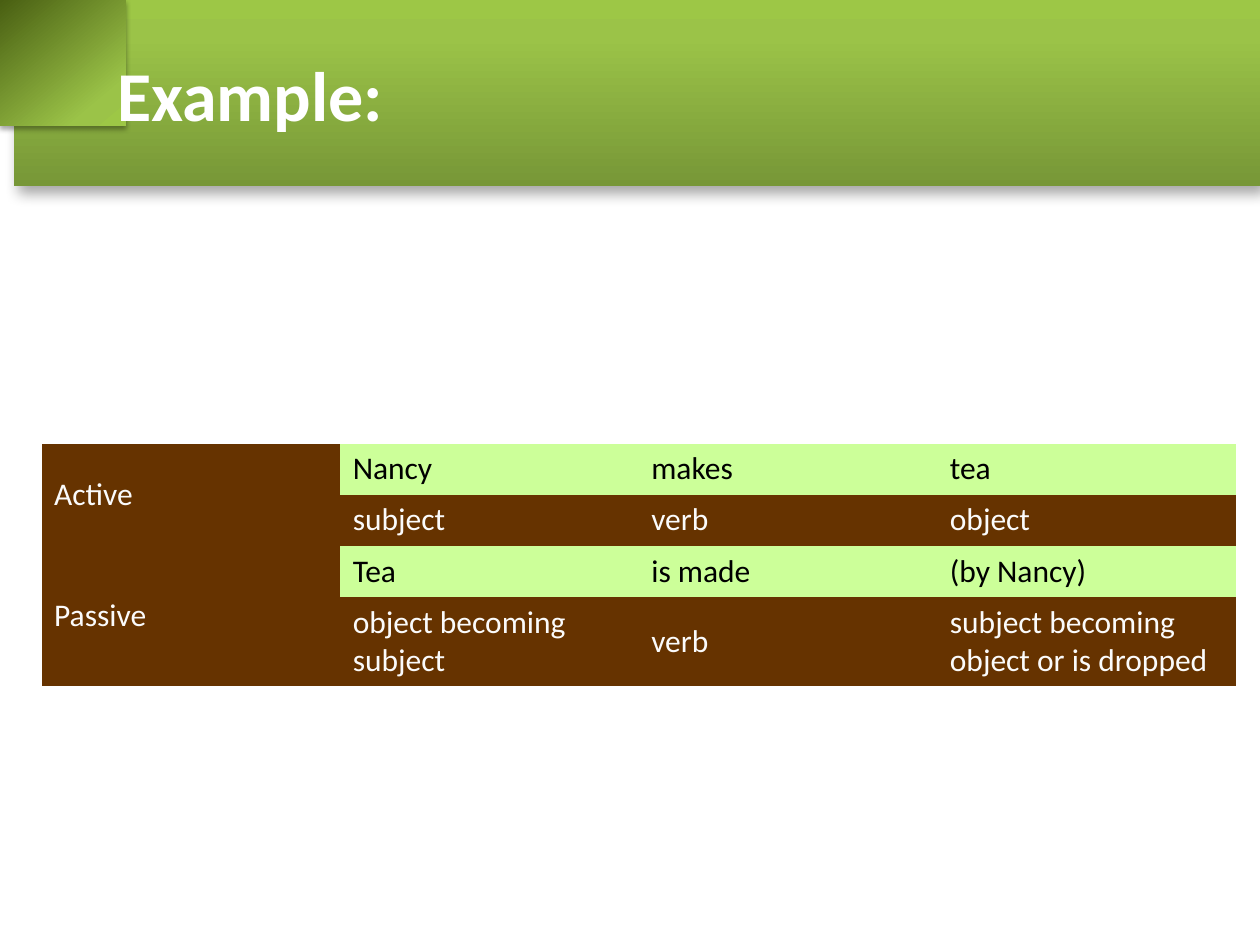
from dataclasses import dataclass

import lxml.etree
import pptx
import pptx.dml.color
import pptx.enum.text
import pptx.oxml.ns
import pptx.util

WIDTH, HEIGHT = 10, 7.5
BROWN, LIME, PALE, BLACK, WHITE = "663300", "CCFF99", "FBFBFB", "000000", "FFFFFF"
NO_GRID_STYLE = "{2D5ABB26-0587-4C30-8999-92F81FD0307C}"
COLUMN_WIDTH = 2.37
ROW_HEIGHTS = (0.4, 0.4, 0.4, 0.7)
HEXAGON = ((0, 0.09), (0.11, 0), (0.73, 0.31), (0.73, 1.16), (0.11, 1.47), (0, 1.41))


@dataclass
class Shadow:
    blur: float
    distance: float
    direction: int


@dataclass
class Voice:
    name: str
    words: tuple[str, ...]
    roles: tuple[str, ...]


VOICES = (
    Voice("Active", ("Nancy", "makes", "tea"), ("subject", "verb", "object")),
    Voice(
        "Passive",
        ("Tea", "is made", "(by Nancy)"),
        ("object becoming subject", "verb", "subject becoming object or is dropped"),
    ),
)


def color(value: str) -> pptx.dml.color.RGBColor:
    return pptx.dml.color.RGBColor.from_string(value)


def add_element(parent, tag: str, **attributes):
    child = lxml.etree.SubElement(parent, pptx.oxml.ns.qn(tag))
    for name, value in attributes.items():
        child.set(name, str(value))
    return child


def decorate(shape, dark: str, angle: int, shadow: Shadow) -> None:
    shape.line.fill.background()
    shape.fill.gradient()
    shape.fill.gradient_angle = angle
    properties = shape._element.spPr
    stops = properties.find(".//" + pptx.oxml.ns.qn("a:gsLst"))
    for stop in list(stops):
        stops.remove(stop)
    for position, value in ((0, dark), (80, "9BC348"), (100, "9DC746")):
        stop = add_element(stops, "a:gs", pos=position * 1000)
        add_element(stop, "a:srgbClr", val=value)
    shape.shadow.inherit = False
    effects = properties.find(pptx.oxml.ns.qn("a:effectLst"))
    outer = add_element(
        effects,
        "a:outerShdw",
        blurRad=pptx.util.Pt(shadow.blur),
        dist=pptx.util.Pt(shadow.distance),
        dir=shadow.direction * 60000,
        rotWithShape=0,
    )
    tint = add_element(outer, "a:srgbClr", val=BLACK)
    add_element(tint, "a:alpha", val=35000)


def write(frame, text: str, value: str, **formats) -> None:
    para = frame.paragraphs[0]
    span = para.add_run()
    span.text = text
    span.font.color.rgb = color(value)
    for name, setting in {"name": "Calibri", **formats}.items():
        setattr(span.font, name, setting)


def fill_cell(cell, text: str, background: str, value: str, middle: bool = True) -> None:
    cell.fill.solid()
    cell.fill.fore_color.rgb = color(background)
    if middle:
        cell.vertical_anchor = pptx.enum.text.MSO_ANCHOR.MIDDLE
    write(cell.text_frame, text, value, size=pptx.util.Pt(18))


def add_banner(page) -> None:
    inches = pptx.util.Inches
    bar = page.shapes.add_shape(
        pptx.enum.shapes.MSO_SHAPE.RECTANGLE,
        inches(0.11), 0, inches(WIDTH - 0.11), inches(1.48),
    )
    decorate(bar, "779737", 90, Shadow(8, 5, 60))
    builder = page.shapes.build_freeform(*HEXAGON[0], scale=inches(1))
    builder.add_line_segments(HEXAGON[1:], close=True)
    decorate(builder.convert_to_shape(), "495F12", 310, Shadow(3.1, 1.8, 90))


def add_voice_table(page) -> None:
    inches = pptx.util.Inches
    columns = 1 + len(VOICES[0].words)
    frame = page.shapes.add_table(
        len(ROW_HEIGHTS), columns, inches(0.33), inches(3.52),
        inches(COLUMN_WIDTH * columns), inches(sum(ROW_HEIGHTS)),
    )
    table = frame.table
    table.first_row = table.horz_banding = False
    table._tbl.tblPr.find(pptx.oxml.ns.qn("a:tableStyleId")).text = NO_GRID_STYLE
    for column in table.columns:
        column.width = inches(COLUMN_WIDTH)
    for row, height in zip(table.rows, ROW_HEIGHTS):
        row.height = inches(height)
    for index, voice in enumerate(VOICES):
        top = 2 * index
        table.cell(top, 0).merge(table.cell(top + 1, 0))
        fill_cell(table.cell(top, 0), voice.name, BROWN, PALE)
        for column, (word, role) in enumerate(zip(voice.words, voice.roles), 1):
            fill_cell(table.cell(top, column), word, LIME, BLACK, middle=False)
            fill_cell(table.cell(top + 1, column), role, BROWN, PALE)


def place_title(page) -> None:
    title = page.shapes.title
    box = {"left": 0.83, "top": 0.18, "width": 9.01, "height": 1.25}
    for name, length in box.items():
        setattr(title, name, pptx.util.Inches(length))
    title.text_frame.vertical_anchor = pptx.enum.text.MSO_ANCHOR.MIDDLE
    para = title.text_frame.paragraphs[0]
    para.alignment = pptx.enum.text.PP_ALIGN.LEFT
    para.line_spacing = 0.8
    write(title.text_frame, "Example:", WHITE, size=pptx.util.Pt(40), bold=True)
    title._element.getparent().append(title._element)


def main() -> None:
    deck = pptx.Presentation()
    deck.slide_width = pptx.util.Inches(WIDTH)
    deck.slide_height = pptx.util.Inches(HEIGHT)
    page = deck.slides.add_slide(deck.slide_layouts[5])
    add_banner(page)
    add_voice_table(page)
    place_title(page)
    deck.save("out.pptx")


if __name__ == "__main__":
    main()
